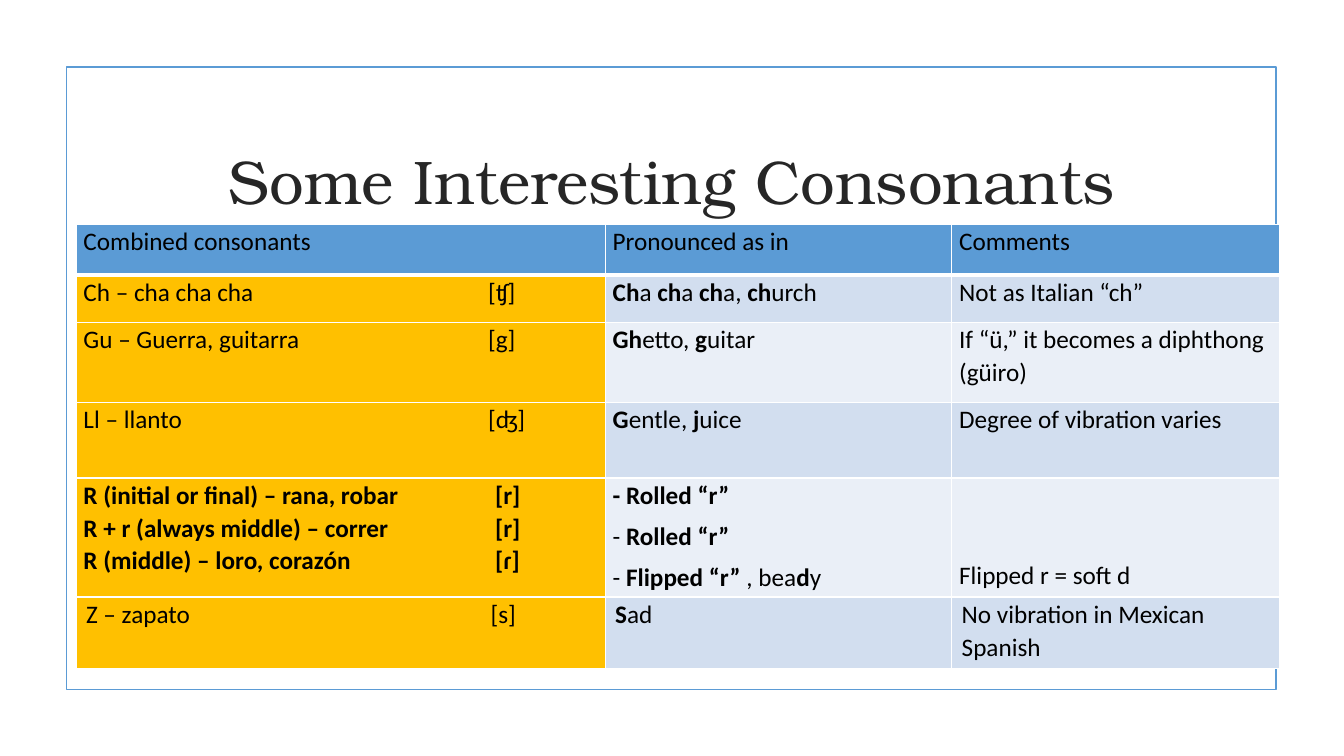
from lxml import etree
from pptx import Presentation
from pptx.dml.color import RGBColor
from pptx.enum.shapes import MSO_SHAPE
from pptx.enum.text import MSO_ANCHOR, PP_ALIGN
from pptx.oxml.ns import qn
from pptx.util import Pt

RECTANGLE = MSO_SHAPE.RECTANGLE
TOP, MIDDLE, BOTTOM = MSO_ANCHOR.TOP, MSO_ANCHOR.MIDDLE, MSO_ANCHOR.BOTTOM
CENTER = PP_ALIGN.CENTER

TITLE = "Some Interesting Consonants"
ROWS = [
    ("Combined consonants", "Pronounced as in", "Comments"),
    ("Ch – cha cha cha\t[ʧ]", "*Ch*a *ch*a *ch*a, *ch*urch", "Not as Italian “ch”"),
    ("Gu – Guerra, guitarra\t[g]", "*Gh*etto, *g*uitar",
     "If “ü,” it becomes a diphthong (güiro)"),
    ("Ll – llanto\t[ʤ]", "*G*entle, *j*uice", "Degree of vibration varies"),
    ("*R (initial or final) – rana, robar\t[r]*\n"
     "*R + r (always middle) – correr\t[r]*\n"
     "*R (middle) – loro, corazón\t[ɾ]*",
     "*- Rolled “r”*\n- *Rolled “r”*\n- *Flipped “r”* , bea*d*y",
     "Flipped r = soft d"),
    ("Z – zapato\t[s]", "*S*ad", "No vibration in Mexican Spanish"),
]
ROLLED_ROW, LAST_ROW = 4, 5
COLUMN_WIDTHS = [378, 247.5, 234.5]
ROW_HEIGHTS = [36, 34, 57, 54, 85, 51]
TABLE_LEFT, TABLE_TOP = 54.25, 160.5
FRAME = (47.5, 48, 864, 444.5)
TITLE_BOX = (102.25, 77, 756, 103)
PLAIN_TAB, BOLD_TAB = 289, 294

THEME = {
    "blue": "5B9BD5", "gold": "FFC000", "bands": ("EAEFF7", "D2DEEF"),
    "white": "FFFFFF", "black": "000000", "title": "262626",
    "title_font": "TeX Gyre Bonum", "body_font": "Calibri",
    "title_size": 44, "body_size": 18,
}


def color(name):
    return RGBColor.from_string(THEME[name])


def style_font(font, role, size, tint):
    font.name = THEME[role]
    font.size = Pt(THEME[size])
    font.color.rgb = color(tint)


def add_tab(paragraph, position):
    properties = paragraph._p.get_or_add_pPr()
    tabs = etree.SubElement(properties, qn("a:tabLst"))
    etree.SubElement(tabs, qn("a:tab"), pos=str(Pt(position)), algn="l")


def add_borders(cell, bottom_width):
    properties = cell._tc.get_or_add_tcPr()
    for side, width in (("L", 1), ("R", 1), ("T", 1), ("B", bottom_width)):
        line = etree.SubElement(properties, qn(f"a:ln{side}"), w=str(Pt(width)))
        fill = etree.SubElement(line, qn("a:solidFill"))
        etree.SubElement(fill, qn("a:srgbClr"), val=THEME["white"])


def write_paragraph(paragraph, text, space_after):
    if "\t" in text:
        add_tab(paragraph, BOLD_TAB if text.startswith("*") else PLAIN_TAB)
    paragraph.line_spacing = 1.07
    paragraph.space_after = Pt(space_after)
    style_font(paragraph.font, "body_font", "body_size", "black")
    for index, piece in enumerate(text.split("*")):
        if piece:
            run = paragraph.add_run()
            run.text = piece
            run.font.bold = index % 2 == 1


def fill_color(row, column):
    if row == 0:
        return THEME["blue"]
    return THEME["gold"] if column == 0 else THEME["bands"][row % 2]


def write_cell(cell, row, column, text):
    add_borders(cell, 3 if row == 0 else 1)
    cell.fill.solid()
    cell.fill.fore_color.rgb = RGBColor.from_string(fill_color(row, column))
    at_bottom = (row, column) == (ROLLED_ROW, 2)
    cell.vertical_anchor = BOTTOM if at_bottom else TOP
    cell.margin_left = cell.margin_right = Pt(7.2 if row == LAST_ROW else 5.4)
    cell.margin_top = Pt(0)
    cell.margin_bottom = Pt(4 if at_bottom else 0)
    frame = cell.text_frame
    space_after = 6 if (row, column) == (ROLLED_ROW, 1) else 0
    for index, line in enumerate(text.split("\n")):
        paragraph = frame.add_paragraph() if index else frame.paragraphs[0]
        write_paragraph(paragraph, line, space_after)


def add_frame(slide):
    shape = slide.shapes.add_shape(RECTANGLE, *map(Pt, FRAME))
    shape.shadow.inherit = False
    shape.fill.background()
    shape.line.color.rgb = color("blue")
    shape.line.width = Pt(1.25)


def add_title(slide):
    frame = slide.shapes.add_textbox(*map(Pt, TITLE_BOX)).text_frame
    frame.word_wrap = True
    frame.vertical_anchor = MIDDLE
    paragraph = frame.paragraphs[0]
    paragraph.text = TITLE
    paragraph.alignment = CENTER
    style_font(paragraph.font, "title_font", "title_size", "title")


def add_consonant_table(slide):
    table = slide.shapes.add_table(
        len(ROWS), len(COLUMN_WIDTHS), Pt(TABLE_LEFT), Pt(TABLE_TOP),
        Pt(sum(COLUMN_WIDTHS)), Pt(sum(ROW_HEIGHTS))).table
    table.first_row = table.horz_banding = False
    for column, width in zip(table.columns, COLUMN_WIDTHS):
        column.width = Pt(width)
    for row, height in zip(table.rows, ROW_HEIGHTS):
        row.height = Pt(height)
    for row, texts in enumerate(ROWS):
        for column, text in enumerate(texts):
            write_cell(table.cell(row, column), row, column, text)


def main():
    presentation = Presentation()
    presentation.slide_width, presentation.slide_height = Pt(960), Pt(540)
    slide = presentation.slides.add_slide(presentation.slide_layouts[6])
    add_frame(slide)
    add_title(slide)
    add_consonant_table(slide)
    presentation.save("out.pptx")


if __name__ == "__main__":
    main()
